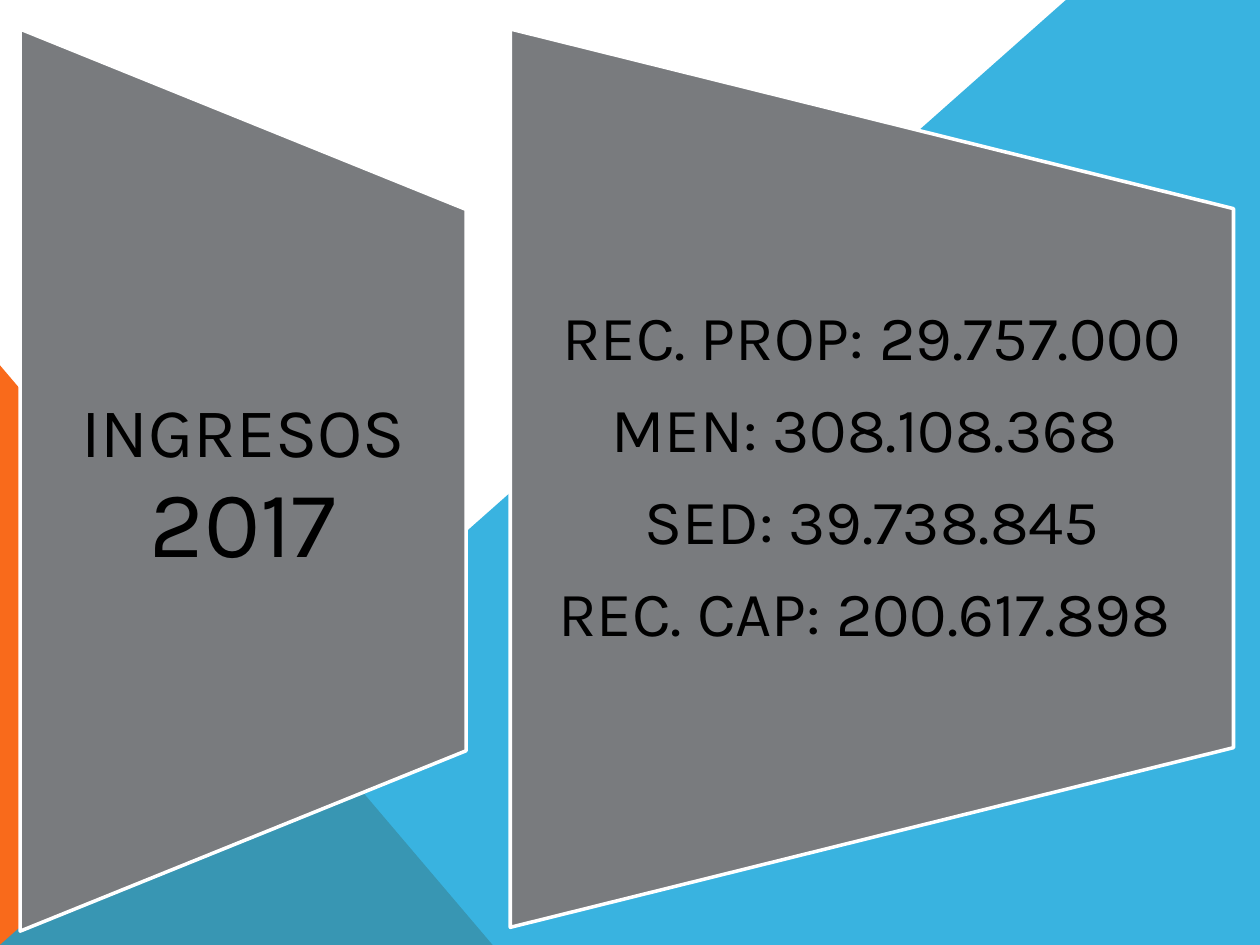
from dataclasses import dataclass

from lxml.etree import SubElement
from pptx import Presentation
from pptx.dml.color import RGBColor as RGB
from pptx.enum.shapes import MSO_SHAPE as Shape
from pptx.enum.text import MSO_ANCHOR as Anchor, PP_ALIGN as Align
from pptx.oxml.ns import qn
from pptx.util import Inches, Pt


@dataclass(frozen=True)
class Theme:
    font: str = "Karla"
    ink: RGB = RGB(0, 0, 0)
    white: RGB = RGB(255, 255, 255)
    gray: RGB = RGB(0x79, 0x7B, 0x7E)
    orange: RGB = RGB(0xF9, 0x6A, 0x1B)
    blue: RGB = RGB(0x08, 0xA1, 0xD9)
    label: int = 40
    gap: int = 50
    year: int = 54
    body: int = 36
    edge: int = 2
    after: float = 13.5


THEME = Theme()


def paint(shape, color, alpha=None):
    """Give a flat fill, with opacity in percent, and no line or shadow."""
    shape.shadow.inherit = False
    shape.fill.solid()
    shape.fill.fore_color.rgb = color
    shape.line.fill.background()
    if alpha is not None:
        tone = shape.fill._xPr.find(".//" + qn("a:srgbClr"))
        SubElement(tone, qn("a:alpha"), val=str(alpha * 1000))


def backdrop(slide, left, top, width, height):
    rise = Inches(4.6)
    wedge = slide.shapes.add_shape(
        Shape.RIGHT_TRIANGLE, left, top + height - rise, Inches(3.91), rise)
    paint(wedge, THEME.orange)

    right, base = left + width, top + height
    pen = slide.shapes.build_freeform(left, base)
    pen.add_line_segments(
        [(left + Inches(8.46), top), (right, top), (right, base)])
    paint(pen.convert_to_shape(), THEME.blue, 80)


def panel(slide, left, top, width, height):
    """Draw a trapezoid on its side, with its long edge at the left."""
    shape = slide.shapes.add_shape(
        Shape.FLOWCHART_MANUAL_OPERATION,
        left + (width - height) // 2, top + (height - width) // 2,
        height, width)
    shape.rotation = 270
    paint(shape, THEME.gray)
    shape.line.color.rgb = THEME.white
    shape.line.width = Pt(THEME.edge)


def label(slide, left, top, width, height, pad, lines):
    """Write centred lines, each a list of (text, size) runs."""
    frame = slide.shapes.add_textbox(left, top, width, height).text_frame
    frame.word_wrap = True
    frame.vertical_anchor = Anchor.MIDDLE
    frame.margin_left = frame.margin_right = pad
    frame.margin_top = frame.margin_bottom = 0
    for i, line in enumerate(lines):
        para = frame.add_paragraph() if i else frame.paragraphs[0]
        para.alignment = Align.CENTER
        para.line_spacing = 0.9
        para.space_after = Pt(THEME.after)
        para.font.name = THEME.font
        para.font.color.rgb = THEME.ink
        for text, size in line:
            run = para.add_run()
            run.text = text
            run.font.size = Pt(size)


def card(slide, left, top, width, height, pad, lines):
    panel(slide, left, top, width, height)
    inset = height // 5
    label(slide, left, top + inset, width, height - 2 * inset, pad, lines)


def main():
    deck = Presentation()
    deck.slide_width, deck.slide_height = Inches(10), Inches(7.5)
    slide = deck.slides.add_slide(deck.slide_layouts[6])
    backdrop(slide, 0, 0, deck.slide_width, deck.slide_height)

    heading = [("INGRESOS", THEME.label), (" ", THEME.gap),
               ("2017", THEME.year)]
    card(slide, Inches(0.16), Inches(0.23), Inches(3.54), Inches(7.16),
         Inches(0.28), [heading])

    sources = ["REC. PROP: 29.757.000", "MEN: 308.108.368 ",
               "SED: 39.738.845", "REC. CAP: 200.617.898 "]
    card(slide, Inches(4.05), Inches(0.23), Inches(5.74), Inches(7.13),
         Inches(0.25), [[(text, THEME.body)] for text in sources])
    deck.save("out.pptx")


if __name__ == "__main__":
    main()
